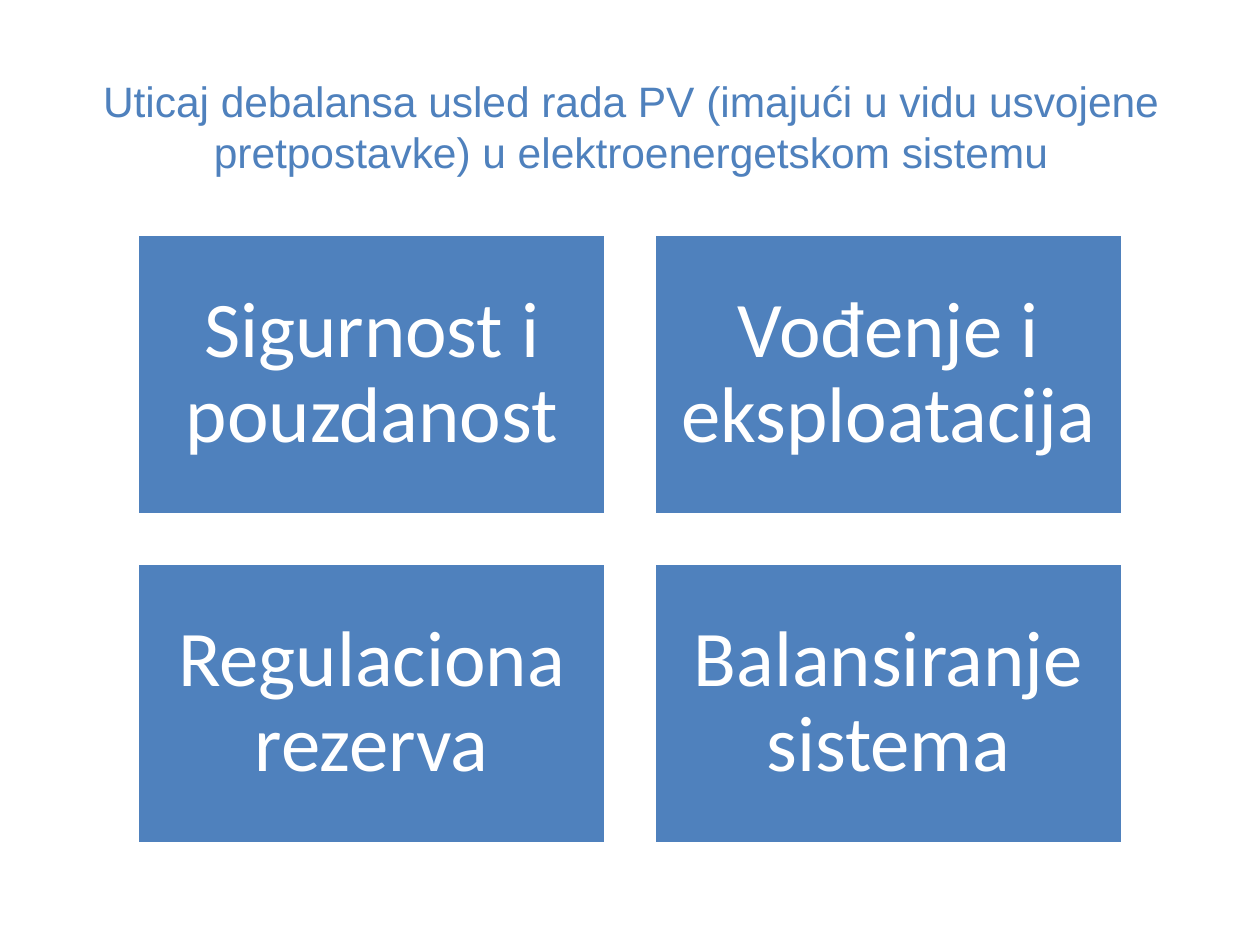
from pptx import Presentation
from pptx.dml.color import RGBColor
from pptx.enum.shapes import MSO_SHAPE as Shape
from pptx.enum.text import MSO_ANCHOR as Anchor, MSO_AUTO_SIZE as Fit, PP_ALIGN as Align
from pptx.util import Inches, Pt

BLUE = RGBColor(0x4F, 0x81, 0xBD)
WHITE = RGBColor(0xFF, 0xFF, 0xFF)

TITLE = ("Uticaj debalansa usled rada PV (imajući u vidu usvojene "
         "pretpostavke) u elektroenergetskom sistemu")
TOPICS = ["Sigurnost i pouzdanost", "Vođenje i eksploatacija",
          "Regulaciona rezerva", "Balansiranje sistema"]


def write(frame, text, *, font, size, color, pad, base, space=1.0, after=0):
    """Put centred text in a frame; base is the bottom inset."""
    frame.word_wrap = True
    frame.auto_size = Fit.NONE
    frame.vertical_anchor = Anchor.MIDDLE
    frame.margin_left = frame.margin_right = frame.margin_top = Inches(pad)
    frame.margin_bottom = Inches(base)
    para = frame.paragraphs[0]
    para.alignment = Align.CENTER
    para.line_spacing = space
    para.space_after = Pt(after)
    run = para.add_run()
    run.text = text
    run.font.name = font
    run.font.size = Pt(size)
    run.font.color.rgb = color


class Deck:
    """Holds the style and the current slide."""
    head = dict(font="Arial", size=24.3, color=BLUE, pad=0.1, base=0.48)
    tile = dict(font="Calibri", size=45, color=WHITE, pad=0.19, base=0.19,
                space=0.9, after=15.75)

    def __init__(self, file):
        self.slide = file.slides.add_slide(file.slide_layouts[5])

    def title(self, text, x, y, w, h):
        box = self.slide.shapes.title
        box.left, box.top = Inches(x), Inches(y)
        box.width, box.height = Inches(w), Inches(h)
        write(box.text_frame, text, **self.head)

    def block(self, text, x, y, w, h):
        box = self.slide.shapes.add_shape(
            Shape.RECTANGLE, Inches(x), Inches(y), Inches(w), Inches(h))
        box.shadow.inherit = False
        box.fill.solid()
        box.fill.fore_color.rgb = BLUE
        box.line.color.rgb = WHITE
        box.line.width = Pt(2)
        write(box.text_frame, text, **self.tile)

    def grid(self, texts, x, y, w, h, gap, cols):
        for i, text in enumerate(texts):
            row, col = divmod(i, cols)
            self.block(text, x + col * (w + gap), y + row * (h + gap), w, h)


def main():
    file = Presentation()
    file.slide_width, file.slide_height = Inches(10), Inches(7.5)
    deck = Deck(file)

    # Heading
    deck.title(TITLE, 0.51, 0.6, 9, 1.18)

    # Two by two topics
    deck.grid(TOPICS, 1.09, 1.86, 3.72, 2.23, gap=0.38, cols=2)

    file.save("out.pptx")


if __name__ == "__main__":
    main()
